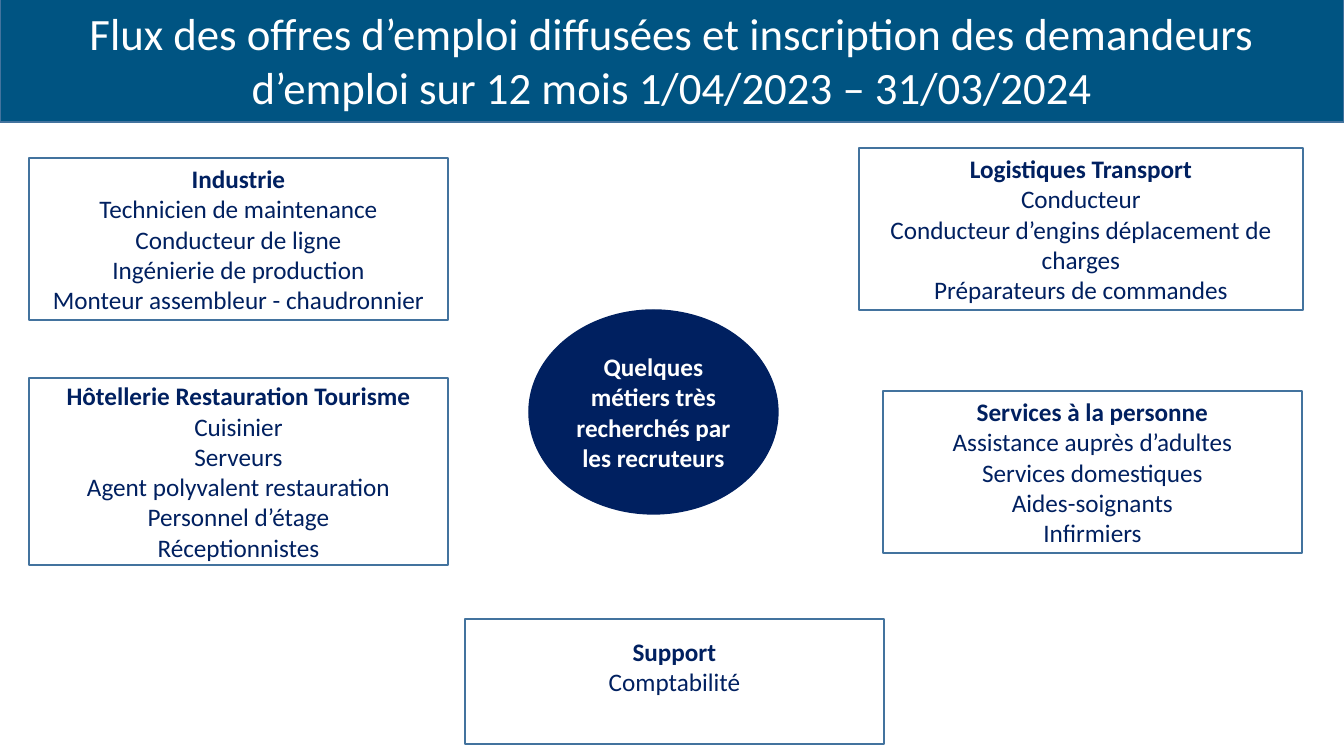
"""Build the slide on the most sought-after jobs, sector by sector."""
from dataclasses import dataclass

from pptx import Presentation
from pptx.dml.color import RGBColor
from pptx.enum.shapes import MSO_SHAPE as Shape
from pptx.enum.text import MSO_ANCHOR as Anchor, PP_ALIGN as Align
from pptx.util import Pt

TITLE = ("Flux des offres d’emploi diffusées et inscription des demandeurs "
         "d’emploi sur 12 mois 1/04/2023 – 31/03/2024")
HUB = "Quelques métiers très recherchés par les recruteurs"
SECTORS = [
    ("Industrie", (29, 158, 419, 162), 5,
     ["Technicien de maintenance", "Conducteur de ligne",
      "Ingénierie de production", "Monteur assembleur - chaudronnier"]),
    ("Hôtellerie Restauration Tourisme", (29, 378, 419, 187), 5,
     ["Cuisinier", "Serveurs", "Agent polyvalent restauration",
      "Personnel d’étage", "Réceptionnistes"]),
    ("Logistiques Transport", (859, 148, 444, 162), 5,
     ["Conducteur", "Conducteur d’engins déplacement de charges",
      "Préparateurs de commandes"]),
    ("Services à la personne", (883, 391, 419, 162), 5,
     ["Assistance auprès d’adultes", "Services domestiques",
      "Aides-soignants", "Infirmiers"]),
    ("Support", (465, 619, 419, 125), 35, ["Comptabilité"]),
]
SLIDE_SIZE = (1344, 756)
TITLE_BOX = (0, -3, 1344, 125)
HUB_BOX = (529, 310, 249, 204)
EMU_PER_PX = 914400 / 100.8


@dataclass(frozen=True)
class Theme:
    """Colours and type of the slide."""
    font: str = "Calibri"
    title_size: int = 32
    body_size: int = 18
    line_width: int = 1
    banner: RGBColor = RGBColor(0x00, 0x54, 0x82)
    border: RGBColor = RGBColor(0x43, 0x73, 0x9E)
    navy: RGBColor = RGBColor(0x00, 0x20, 0x60)
    white: RGBColor = RGBColor(0xFF, 0xFF, 0xFF)


THEME = Theme()


def px(length):
    """Turn px into EMU."""
    return round(length * EMU_PER_PX)


def add_panel(slide, kind, box, lines, line_color, text_color,
              fill=None, size=THEME.body_size, bottom=5):
    """Add a shape with centred lines, each given as (text, bold)."""
    shape = slide.shapes.add_shape(kind, *map(px, box))
    shape.shadow.inherit = False
    if fill is None:
        shape.fill.background()
    else:
        shape.fill.solid()
        shape.fill.fore_color.rgb = fill
    shape.line.color.rgb = line_color
    shape.line.width = Pt(THEME.line_width)
    frame = shape.text_frame
    frame.word_wrap = True
    frame.vertical_anchor = Anchor.MIDDLE
    frame.margin_bottom = px(bottom)
    for index, (text, bold) in enumerate(lines):
        paragraph = frame.add_paragraph() if index else frame.paragraphs[0]
        paragraph.text = text
        paragraph.alignment = Align.CENTER
        font = paragraph.font
        font.name, font.size, font.bold = THEME.font, Pt(size), bold
        font.color.rgb = text_color


def main():
    """Create the presentation and save it."""
    presentation = Presentation()
    presentation.slide_width, presentation.slide_height = map(px, SLIDE_SIZE)
    slide = presentation.slides.add_slide(presentation.slide_layouts[6])
    add_panel(slide, Shape.RECTANGLE, TITLE_BOX, [(TITLE, False)],
              THEME.border, THEME.white, THEME.banner, THEME.title_size)
    for sector, box, bottom, jobs in SECTORS:
        lines = [(sector, True)] + [(job, False) for job in jobs]
        add_panel(slide, Shape.RECTANGLE, box, lines,
                  THEME.border, THEME.navy, bottom=bottom)
    add_panel(slide, Shape.OVAL, HUB_BOX, [(HUB, True)],
              THEME.navy, THEME.white, THEME.navy)
    presentation.save("out.pptx")


if __name__ == "__main__":
    main()
